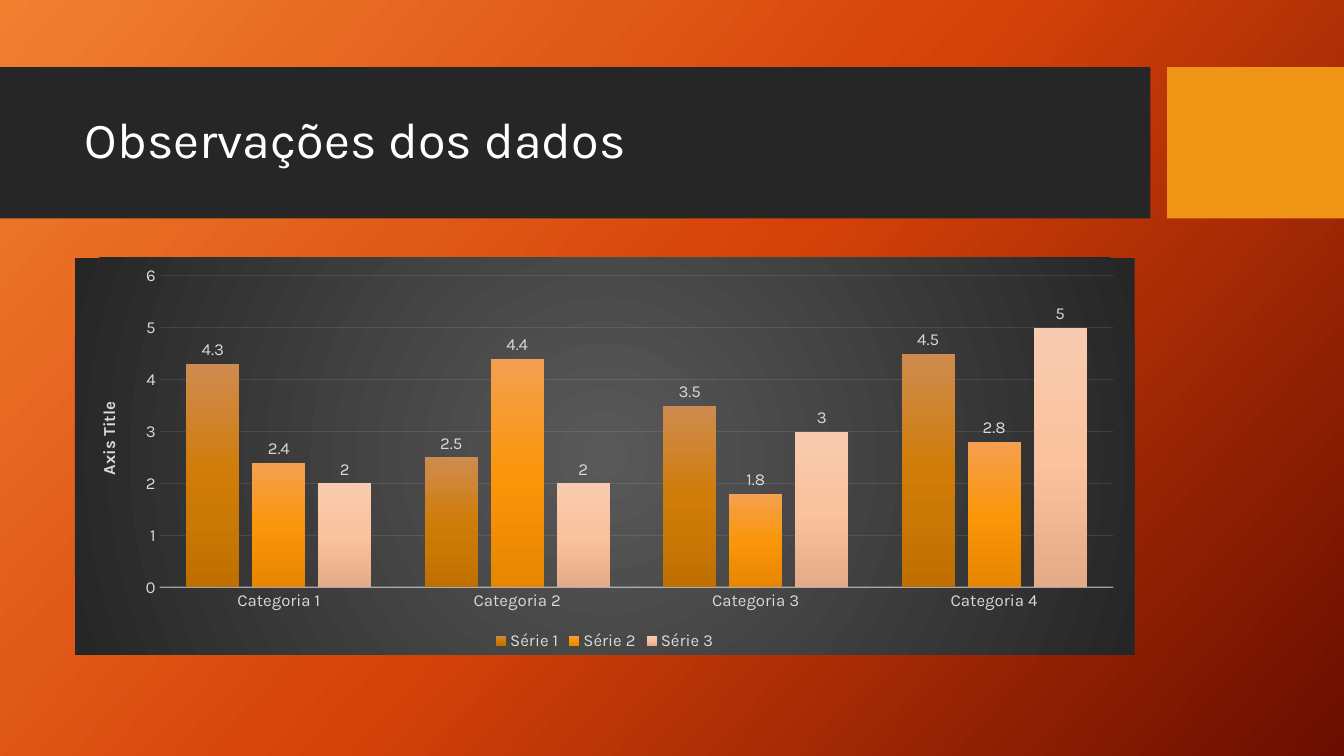
import pptx
import pptx.chart.data
import pptx.dml.color
import pptx.enum.chart
import pptx.enum.shapes
import pptx.enum.text
import pptx.oxml
import pptx.oxml.ns
import pptx.util

# Content
TITLE = "Observações dos dados"
AXIS_TITLE = "Axis Title"
CATEGORIES = ["Categoria 1", "Categoria 2", "Categoria 3", "Categoria 4"]
SERIES = {
    "Série 1": (4.3, 2.5, 3.5, 4.5),
    "Série 2": (2.4, 4.4, 1.8, 2.8),
    "Série 3": (2, 2, 3, 5),
}

# Style
FONT = "Karla"
COLORS = {"band": "262626", "accent": "F09415", "title": "FFFFFF",
          "label": "D9D9D9", "line": "F2F2F2"}
BACKGROUND_STOPS = {0: "F18031", 50: "D54209", 100: "6A0D00"}
CHART_STOPS = {0: "595959", 100: "262626"}
SERIES_STOPS = [
    {0: "CE8B4F", 50: "D07C08", 100: "C07000"},
    {0: "F4A050", 50: "FB960A", 100: "E88600"},
    {0: "F8CBB0", 50: "FAC29E", 100: "E3AB87"},
]

# Layout in points
SLIDE_SIZE = (960, 540)
BAND_TOP, BAND_HEIGHT = 48, 108
BANDS = [(0, 821.75, "band"), (833.75, 126.25, "accent")]
TITLE_BOX = (53.5, 59, 757, 85)
CHART_BOX = (53.5, 184.25, 757, 283.5)
PLOT_AREA = {"x": 0.08, "y": 0.045, "w": 0.9, "h": 0.785}

Pt = pptx.util.Pt
qn = pptx.oxml.ns.qn
NAMESPACES = pptx.oxml.ns.nsdecls("a", "c")


def rgb(name):
    return pptx.dml.color.RGBColor.from_string(COLORS[name])


def style_font(font, size, color, bold=False):
    font.name, font.size, font.bold = FONT, Pt(size), bold
    font.color.rgb = rgb(color)


def gradient_xml(stops, direction):
    stop_xml = "".join(
        f'<a:gs pos="{position * 1000}"><a:srgbClr val="{color}"/></a:gs>'
        for position, color in stops.items())
    return (f'<a:gradFill {NAMESPACES} rotWithShape="1">'
            f'<a:gsLst>{stop_xml}</a:gsLst>{direction}</a:gradFill>')


def linear_gradient(properties, stops, angle):
    """Replace the solid fill of a properties element by a linear gradient."""
    direction = f'<a:lin ang="{angle * 60000}" scaled="0"/>'
    solid = properties.find(qn("a:solidFill"))
    properties.replace(solid, pptx.oxml.parse_xml(gradient_xml(stops, direction)))


def style_line(line, width, opacity):
    line.width = Pt(width)
    line.color.rgb = rgb("line")
    return f'<a:alpha {NAMESPACES} val="{opacity * 1000}"/>'


presentation = pptx.Presentation()
presentation.slide_width, presentation.slide_height = map(Pt, SLIDE_SIZE)
slide = presentation.slides.add_slide(presentation.slide_layouts[6])

# Background
slide.background.fill.solid()
linear_gradient(next(slide.element.iter(qn("p:bgPr"))), BACKGROUND_STOPS, 42)

# Title band and accent block
for left, width, color in BANDS:
    shape = slide.shapes.add_shape(
        pptx.enum.shapes.MSO_SHAPE.RECTANGLE,
        Pt(left), Pt(BAND_TOP), Pt(width), Pt(BAND_HEIGHT))
    shape.shadow.inherit = False
    shape.fill.solid()
    shape.fill.fore_color.rgb = rgb(color)
    shape.line.fill.background()

# Title
text_frame = slide.shapes.add_textbox(*map(Pt, TITLE_BOX)).text_frame
text_frame.word_wrap = True
text_frame.vertical_anchor = pptx.enum.text.MSO_ANCHOR.MIDDLE
text_frame.text = TITLE
paragraph = text_frame.paragraphs[0]
paragraph.line_spacing = 0.9
style_font(paragraph.runs[0].font, 36, "title")

# Chart
chart_data = pptx.chart.data.CategoryChartData()
chart_data.categories = CATEGORIES
for name, values in SERIES.items():
    chart_data.add_series(name, values)
chart = slide.shapes.add_chart(
    pptx.enum.chart.XL_CHART_TYPE.COLUMN_CLUSTERED,
    *map(Pt, CHART_BOX), chart_data).chart
chart.has_title = False
style_font(chart.font, 10, "title")
chart.has_legend = True
chart.legend.position = pptx.enum.chart.XL_LEGEND_POSITION.BOTTOM
chart.legend.include_in_layout = False
style_font(chart.legend.font, 12, "label")

# Columns and value labels
plot = chart.plots[0]
plot.gap_width, plot.overlap, plot.vary_by_categories = 100, -24, False
plot.has_data_labels = True
plot.data_labels.show_value = True
plot.data_labels.position = pptx.enum.chart.XL_LABEL_POSITION.OUTSIDE_END
style_font(plot.data_labels.font, 12, "label")
for series, element, stops in zip(
        plot.series, chart.element.iter(qn("c:ser")), SERIES_STOPS):
    series.format.fill.solid()
    linear_gradient(element.find(qn("c:spPr")), stops, 90)

# Axes
category_axis, value_axis = chart.category_axis, chart.value_axis
for axis in (category_axis, value_axis):
    axis.major_tick_mark = pptx.enum.chart.XL_TICK_MARK.NONE
    axis.minor_tick_mark = pptx.enum.chart.XL_TICK_MARK.NONE
    style_font(axis.tick_labels.font, 12, "label")
value_axis.minimum_scale, value_axis.maximum_scale, value_axis.major_unit = 0, 6, 1
value_axis.has_major_gridlines = True
value_axis.format.line.fill.background()
value_axis.axis_title.text_frame.text = AXIS_TITLE
axis_title_frame = value_axis.axis_title.text_frame
style_font(axis_title_frame.paragraphs[0].runs[0].font, 12, "label", bold=True)
body = next(value_axis.axis_title.element.iter(qn("a:bodyPr")))
body.set("rot", "-5400000")
body.set("vert", "horz")

# Translucent axis line and gridlines
for line, tag, width, opacity in (
        (category_axis.format.line, "c:catAx", 1, 54),
        (value_axis.major_gridlines.format.line, "c:majorGridlines", 0.75, 10)):
    alpha = style_line(line, width, opacity)
    outline = next(next(chart.element.iter(qn(tag))).iter(qn("a:ln")))
    next(outline.iter(qn("a:srgbClr"))).append(pptx.oxml.parse_xml(alpha))

# Chart background and plot position
radial = ('<a:path path="circle"><a:fillToRect l="50000" t="50000" '
          'r="50000" b="50000"/></a:path>')
chart.element.find(qn("c:chart")).addnext(pptx.oxml.parse_xml(
    f'<c:spPr {NAMESPACES}>{gradient_xml(CHART_STOPS, radial)}'
    '<a:ln><a:noFill/></a:ln></c:spPr>'))
plot_area = next(chart.element.iter(qn("c:plotArea")))
for layout in plot_area.findall(qn("c:layout")):
    plot_area.remove(layout)
modes = '<c:xMode val="edge"/><c:yMode val="edge"/>'
extents = "".join(f'<c:{key} val="{value}"/>' for key, value in PLOT_AREA.items())
plot_area.insert(0, pptx.oxml.parse_xml(
    f'<c:layout {NAMESPACES}><c:manualLayout><c:layoutTarget val="inner"/>'
    f'{modes}{extents}</c:manualLayout></c:layout>'))

presentation.save("out.pptx")
